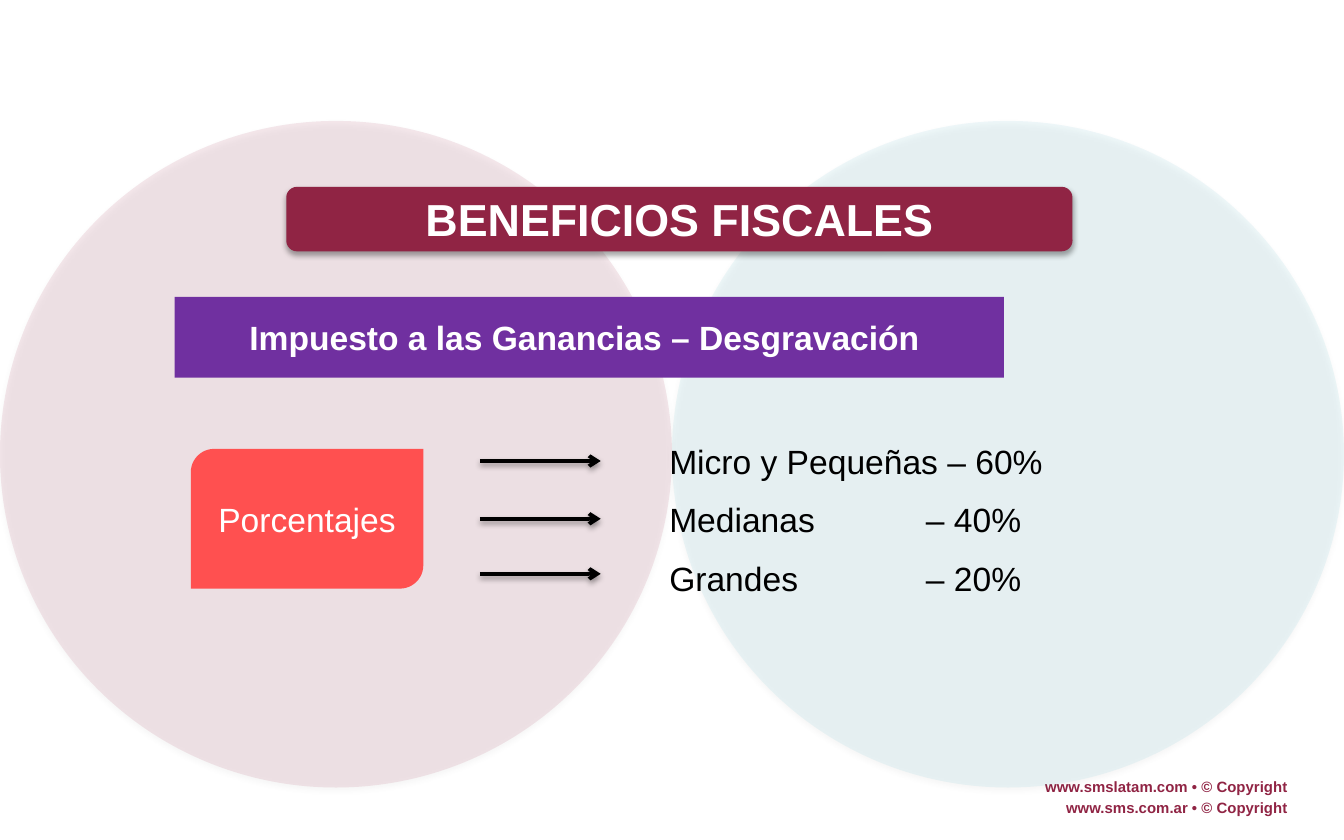
"""Build the slide on income tax relief by company size."""
import pptx
import pptx.dml.color
import pptx.enum.shapes
import pptx.enum.text
import pptx.oxml.ns
import pptx.util
from lxml import etree

Inches = pptx.util.Inches
Pt = pptx.util.Pt
qn = pptx.oxml.ns.qn
Shape = pptx.enum.shapes.MSO_SHAPE
Align = pptx.enum.text.PP_ALIGN

COLORS = {
    "wine": "902444",
    "rose": "A4244A",
    "aqua": "61C1D1",
    "purple": "7030A0",
    "coral": "FF5050",
    "white": "FFFFFF",
    "black": "000000",
}


class SlideBuilder:
    font = "Arial"

    def __init__(self, page):
        self.page = page

    def color(self, name):
        return pptx.dml.color.RGBColor.from_string(COLORS[name])

    def shadow(self, item, opacity, distance):
        properties = item._element.spPr
        for old in properties.findall(qn("a:effectLst")):
            properties.remove(old)
        effects = etree.SubElement(properties, qn("a:effectLst"))
        outer = etree.SubElement(
            effects, qn("a:outerShdw"), blurRad=str(Pt(3.1)), dist=str(Pt(distance)),
            dir="5400000", rotWithShape="0")
        tint = etree.SubElement(outer, qn("a:srgbClr"), val=COLORS["black"])
        etree.SubElement(tint, qn("a:alpha"), val=str(opacity * 1000))

    def label(self, item, text, size, color, bold=False, align=Align.CENTER):
        frame = item.text_frame
        frame.text = text
        frame.word_wrap = True
        para = frame.paragraphs[0]
        para.alignment = align
        for span in para.runs:
            span.font.name = self.font
            span.font.size = Pt(size)
            span.font.bold = bold
            span.font.color.rgb = self.color(color)
        return para

    def shape(self, kind, left, top, width, height, fill):
        item = self.page.shapes.add_shape(
            kind, Inches(left), Inches(top), Inches(width), Inches(height))
        item.shadow.inherit = False
        item.fill.solid()
        item.fill.fore_color.rgb = self.color(fill)
        item.line.fill.background()
        item.text_frame.vertical_anchor = pptx.enum.text.MSO_ANCHOR.MIDDLE
        return item

    def circle(self, left, fill):
        item = self.shape(Shape.OVAL, left, 0.9, 5, 4.96, fill)
        tint = item._element.spPr.find(qn("a:solidFill"))[0]
        etree.SubElement(tint, qn("a:alpha"), val="10000")
        self.shadow(item, 38, 1.6)

    def text(self, left, top, width, height, text, size, color, bold=False,
             align=Align.LEFT, inset=0.1, tab=None):
        box = self.page.shapes.add_textbox(
            Inches(left), Inches(top), Inches(width), Inches(height))
        box.text_frame.margin_left = Inches(inset)
        box.text_frame.auto_size = pptx.enum.text.MSO_AUTO_SIZE.SHAPE_TO_FIT_TEXT
        para = self.label(box, text, size, color, bold, align)
        if tab:
            stops = etree.SubElement(para._p.get_or_add_pPr(), qn("a:tabLst"))
            etree.SubElement(stops, qn("a:tab"), pos=str(Inches(tab)), algn="l")

    def arrow(self, left, right, y):
        line = self.page.shapes.add_connector(
            pptx.enum.shapes.MSO_CONNECTOR.STRAIGHT,
            Inches(left), Inches(y), Inches(right), Inches(y))
        line.line.color.rgb = self.color("black")
        line.line.width = Pt(2)
        outline = line._element.spPr.find(qn("a:ln"))
        etree.SubElement(outline, qn("a:tailEnd"), type="arrow")
        self.shadow(line, 38, 1.6)


def main():
    deck = pptx.Presentation()
    deck.slide_width = Inches(10)
    deck.slide_height = Inches(6.25)
    builder = SlideBuilder(deck.slides.add_slide(deck.slide_layouts[6]))

    for top, site in ((5.74, "www.smslatam.com"), (5.89, "www.sms.com.ar")):
        builder.text(7.54, top, 2.14, 0.24, f"{site} • © Copyright", 8, "wine",
                     bold=True, align=Align.RIGHT)

    builder.circle(5, "aqua")
    builder.circle(0, "rose")

    title = builder.shape(Shape.ROUNDED_RECTANGLE, 2.13, 1.39, 5.85, 0.48, "wine")
    builder.shadow(title, 35, 1.8)
    builder.label(title, "BENEFICIOS FISCALES", 24, "white", bold=True)

    subtitle = builder.shape(Shape.RECTANGLE, 1.3, 2.21, 6.17, 0.6, "purple")
    builder.label(subtitle, "Impuesto a las Ganancias – Desgravación ", 18, "white", bold=True)

    rates = (
        (3.43, 3.23, "Micro y Pequeñas – 60%"),
        (3.86, 3.66, "Medianas\t– 40%"),
        (4.27, 4.1, "Grandes\t– 20%"),
    )
    for arrow_y, text_top, rate in rates:
        builder.arrow(3.57, 4.47, arrow_y)
        builder.text(4.38, text_top, 3.51, 0.4, rate, 18, "black", inset=0.6, tab=1.91)

    percentages = builder.shape(
        Shape.ROUND_2_DIAG_RECTANGLE, 1.42, 3.34, 1.73, 1.04, "coral")
    percentages.adjustments[0] = 0.167
    percentages.adjustments[1] = 0
    builder.label(percentages, "Porcentajes", 18, "white")

    deck.save("out.pptx")


if __name__ == "__main__":
    main()
